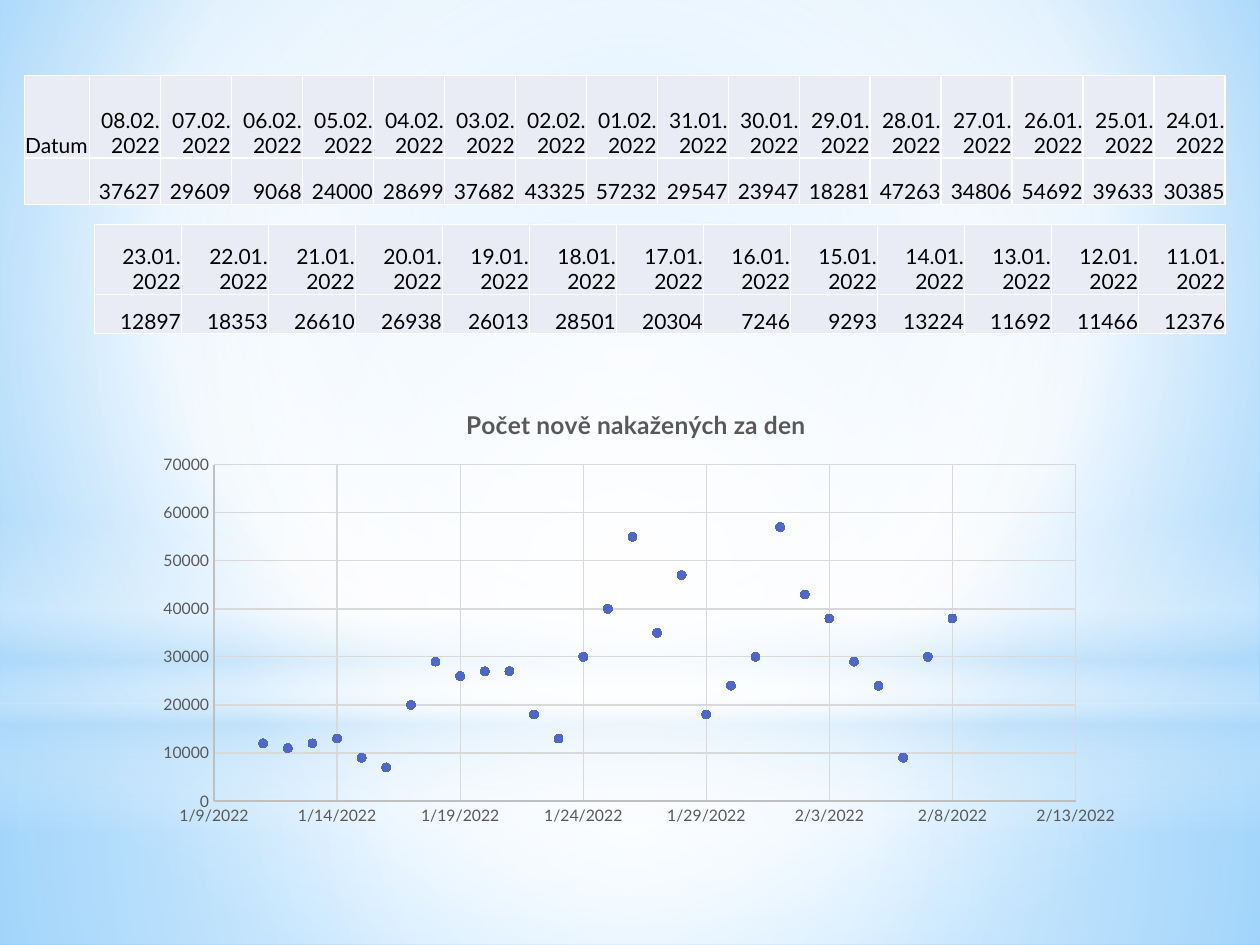
"""Build a slide with daily case counts as two tables and a scatter chart."""
from dataclasses import dataclass
from typing import NamedTuple, Optional

from lxml import etree
from pptx import Presentation
from pptx import util as u
from pptx.chart import data as chart_data
from pptx.dml.color import RGBColor
from pptx.enum import chart as ch, shapes, text
from pptx.oxml.ns import qn


@dataclass(frozen=True)
class Theme:
    font: str = "Lato"
    ink: str = "000000"
    muted: str = "595959"
    cell: str = "E9EBF5"
    border: str = "FFFFFF"
    axis: str = "BFBFBF"
    grid: str = "D9D9D9"
    marker: str = "4E67C8"
    cell_size: float = 12
    axis_size: float = 9
    title_size: float = 14
    hairline: float = 0.75


class Box(NamedTuple):
    left: float
    top: float
    width: float
    height: float

    def points(self):
        return [u.Pt(length) for length in self]


class Stop(NamedTuple):
    position: int
    color: str
    opacity: int = 100


class Gradient(NamedTuple):
    stops: list[Stop]
    focus: Optional[tuple[int, int, int, int]] = (50, 50, 50, 50)


class Glow(NamedTuple):
    box: Box
    gradient: Gradient
    outline: shapes.MSO_SHAPE = shapes.MSO_SHAPE.RECTANGLE


class DailyTable(NamedTuple):
    box: Box
    widths: list[float]
    heights: list[float]
    rows: list[list[str]]


THEME = Theme()
LAST_DAY = 44600
NEW_YEAR_EVE = 44561
COUNTS = [37627, 29609, 9068, 24000, 28699, 37682, 43325, 57232, 29547, 23947,
          18281, 47263, 34806, 54692, 39633, 30385, 12897, 18353, 26610, 26938,
          26013, 28501, 20304, 7246, 9293, 13224, 11692, 11466, 12376]
DAYS = [LAST_DAY - age for age in range(len(COUNTS))]
RECENT = 16

BACKDROP = Gradient([Stop(0, "9ED5FF"), Stop(60, "FFFFFF"), Stop(100, "5BB9FF")],
                    (20, 10, 20, 60))
GLOWS = [
    Glow(Box(0, 401.76, 720, 138.24), Gradient(
        [Stop(0, "FFFFFF", 91), Stop(37, "FFFFFF", 76), Stop(100, "B4DCFA", 79)])),
    Glow(Box(0, 0, 720, 401.76), Gradient(
        [Stop(0, "FFFFFF", 89), Stop(48, "FFFFFF", 62), Stop(100, "B4DCFA", 79)])),
    Glow(Box(0, 296.64, 720, 180), Gradient(
        [Stop(0, "FFFFFF", 0), Stop(29, "FFFFFF", 30), Stop(45, "B4DCFA", 40),
         Stop(55, "FFFFFF", 26), Stop(65, "B4DCFA", 60), Stop(100, "FFFFFF", 0)], None)),
    Glow(Box(0, 126, 720, 401.76), Gradient(
        [Stop(0, "FFFFFF"), Stop(56, "FFFFFF", 0)]), shapes.MSO_SHAPE.OVAL),
]


def rgb(color: str) -> RGBColor:
    return RGBColor.from_string(color)


def day_month(serial: int) -> str:
    day = serial - NEW_YEAR_EVE
    return f"{day:02}.01." if day <= 31 else f"{day - 31:02}.02."


def set_font(font, size: float, color: str, bold: bool = False) -> None:
    font.name, font.size, font.bold = THEME.font, u.Pt(size), bold
    font.color.rgb = rgb(color)


def child(parent, tag: str, **attributes):
    return etree.SubElement(parent, qn(tag), {k: str(v) for k, v in attributes.items()})


def paint_gradient(fill, owner, gradient: Gradient) -> None:
    fill.gradient()
    grad = owner.find(".//" + qn("a:gradFill"))
    for part in list(grad):
        grad.remove(part)
    stop_list = child(grad, "a:gsLst")
    for stop in gradient.stops:
        mark = child(stop_list, "a:gs", pos=stop.position * 1000)
        color = child(mark, "a:srgbClr", val=stop.color)
        if stop.opacity < 100:
            child(color, "a:alpha", val=stop.opacity * 1000)
    if gradient.focus:
        circle = child(grad, "a:path", path="circle")
        child(circle, "a:fillToRect",
              **{side: inset * 1000 for side, inset in zip("ltrb", gradient.focus)})
    else:
        child(grad, "a:lin", ang=90 * 60000, scaled=0)


def draw_glow(slide, glow: Glow) -> None:
    shape = slide.shapes.add_shape(glow.outline, *glow.box.points())
    shape.shadow.inherit = False
    shape.line.fill.background()
    paint_gradient(shape.fill, shape.element, glow.gradient)


def fill_cell(cell, content: str, align) -> None:
    cell.margin_left = cell.margin_right = u.Pt(0.36)
    cell.margin_top, cell.margin_bottom = u.Pt(0.72), u.Pt(0)
    cell.vertical_anchor = text.MSO_ANCHOR.BOTTOM
    properties = cell._tc.get_or_add_tcPr()
    for side in "LRTB":
        edge = child(properties, f"a:ln{side}", w=u.Pt(1))
        child(child(edge, "a:solidFill"), "a:srgbClr", val=THEME.border)
    cell.fill.solid()
    cell.fill.fore_color.rgb = rgb(THEME.cell)
    frame = cell.text_frame
    for index, line in enumerate(content.split("\n") if content else []):
        paragraph = frame.add_paragraph() if index else frame.paragraphs[0]
        paragraph.alignment = align
        run = paragraph.add_run()
        run.text = line
        set_font(run.font, THEME.cell_size, THEME.ink)


def draw_table(slide, daily: DailyTable) -> None:
    table = slide.shapes.add_table(
        len(daily.heights), len(daily.widths), *daily.box.points()).table
    table.first_row = table.horz_banding = False
    for column, width in zip(table.columns, daily.widths):
        column.width = u.Pt(width)
    for row, height, contents in zip(table.rows, daily.heights, daily.rows):
        row.height = u.Pt(height)
        for cell, content in zip(row.cells, contents):
            align = text.PP_ALIGN.LEFT if content == "Datum" else text.PP_ALIGN.RIGHT
            fill_cell(cell, content, align)


def place(part, index: int, **settings) -> None:
    for old in part.findall(qn("c:layout")):
        part.remove(old)
    layout = etree.Element(qn("c:layout"))
    manual = child(layout, "c:manualLayout")
    for tag, value in settings.items():
        child(manual, f"c:{tag}", val=value)
    part.insert(index, layout)


def style_axis(axis, low: int, high: int, step: int, number_format: str) -> None:
    axis.minimum_scale, axis.maximum_scale, axis.major_unit = low, high, step
    axis.major_tick_mark = axis.minor_tick_mark = ch.XL_TICK_MARK.NONE
    axis.has_major_gridlines = True
    for line, color in ((axis.format.line, THEME.axis),
                        (axis.major_gridlines.format.line, THEME.grid)):
        line.color.rgb, line.width = rgb(color), u.Pt(THEME.hairline)
    labels = axis.tick_labels
    labels.number_format, labels.number_format_is_linked = number_format, False
    set_font(labels.font, THEME.axis_size, THEME.muted)


def draw_chart(slide, box: Box) -> None:
    cases = chart_data.XyChartData()
    daily_cases = cases.add_series("Series 1")
    for day, count in zip(DAYS, COUNTS):
        daily_cases.add_data_point(day, round(count, -3))
    chart = slide.shapes.add_chart(
        ch.XL_CHART_TYPE.XY_SCATTER, *box.points(), cases).chart
    set_font(chart.font, 10, THEME.ink)
    chart.has_legend = False
    chart.has_title = True
    title = chart.chart_title.text_frame.paragraphs[0].add_run()
    title.text = "Počet nově nakažených za den"
    set_font(title.font, THEME.title_size, THEME.muted, bold=True)
    place(chart.chart_title._element, 1, xMode="edge", yMode="edge", x=0.32, y=0.03)
    place(chart._chartSpace.chart.plotArea, 0, layoutTarget="inner", xMode="edge",
          yMode="edge", x=0.07, y=0.17, w=0.87, h=0.75)
    style_axis(chart.category_axis, 44570, 44605, 5, "m/d/yyyy")
    style_axis(chart.value_axis, 0, 70000, 10000, "General")
    chart.plots[0].vary_by_categories = False
    series = chart.plots[0].series[0]
    series.smooth = False
    series.format.line.fill.background()
    marker = series.marker
    marker.style, marker.size = ch.XL_MARKER_STYLE.CIRCLE, 5
    marker.format.fill.solid()
    marker.format.fill.fore_color.rgb = rgb(THEME.marker)
    marker.format.line.color.rgb = rgb(THEME.marker)


def main() -> None:
    deck = Presentation()
    deck.slide_width, deck.slide_height = u.Pt(720), u.Pt(540)
    slide = deck.slides.add_slide(deck.slide_layouts[6])
    paint_gradient(slide.background.fill, slide.element, BACKDROP)
    for glow in GLOWS:
        draw_glow(slide, glow)
    counts = [str(count) for count in COUNTS]
    recent = [["Datum"] + [day_month(day) + "2022" for day in DAYS[:RECENT]],
              [""] + counts[:RECENT]]
    earlier = [[day_month(day) + "\n2022" for day in DAYS[RECENT:]], counts[RECENT:]]
    draw_table(slide, DailyTable(Box(14.1, 43.2, 686.12, 73.6),
                                 [37] + [40.57] * RECENT, [47, 26.6], recent))
    draw_table(slide, DailyTable(Box(54, 128.2, 646.62, 62.4),
                                 [49.74] * len(earlier[0]), [40, 22.4], earlier))
    draw_chart(slide, Box(82.7, 222, 565.9, 256.3))
    deck.save("out.pptx")


if __name__ == "__main__":
    main()
